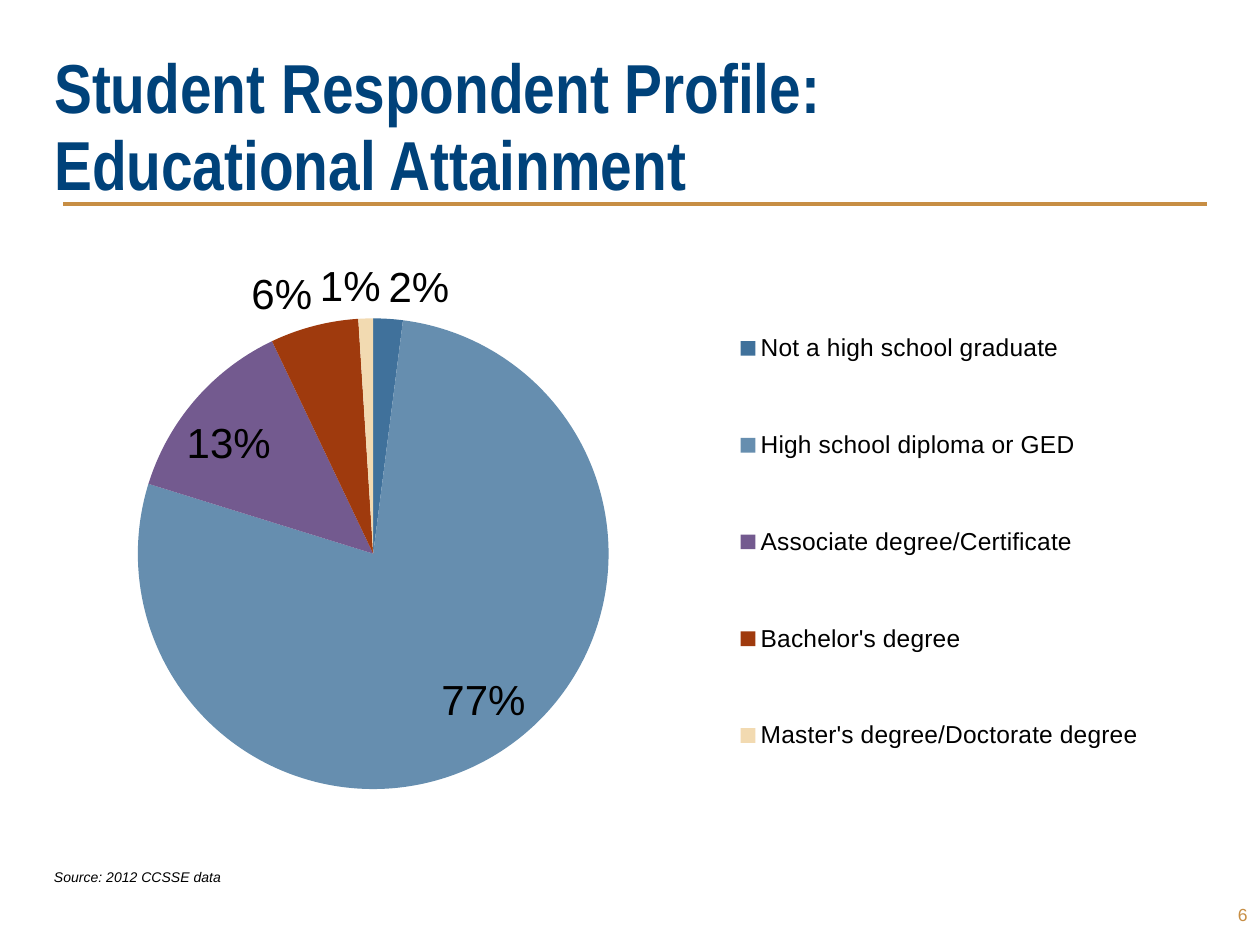
from lxml import etree
from pptx import Presentation
from pptx.chart.data import CategoryChartData
from pptx.dml.color import RGBColor
from pptx.enum.chart import XL_CHART_TYPE, XL_LABEL_POSITION, XL_LEGEND_POSITION
from pptx.enum.shapes import MSO_CONNECTOR
from pptx.enum.text import MSO_ANCHOR, MSO_AUTO_SIZE, PP_ALIGN
from pptx.oxml.ns import qn
from pptx.util import Inches, Pt

PIE = XL_CHART_TYPE.PIE
BEST_FIT = XL_LABEL_POSITION.BEST_FIT
LEGEND_RIGHT = XL_LEGEND_POSITION.RIGHT
STRAIGHT = MSO_CONNECTOR.STRAIGHT
TOP, MIDDLE, BOTTOM = MSO_ANCHOR.TOP, MSO_ANCHOR.MIDDLE, MSO_ANCHOR.BOTTOM
NO_AUTOFIT = MSO_AUTO_SIZE.NONE
LEFT, RIGHT = PP_ALIGN.LEFT, PP_ALIGN.RIGHT

NAVY = RGBColor(0x00, 0x42, 0x7A)
GOLD = RGBColor(0xC7, 0x8E, 0x44)
BLACK = RGBColor(0x00, 0x00, 0x00)
STEEL = RGBColor(0x40, 0x71, 0x9B)
LIGHT_STEEL = RGBColor(0x66, 0x8E, 0xAF)
PURPLE = RGBColor(0x73, 0x5A, 0x8F)
RUST = RGBColor(0x9F, 0x3A, 0x0D)
CREAM = RGBColor(0xF2, 0xDA, 0xB1)

# Category, share of respondents, slice colour; rows without a share have no slice
ATTAINMENT = [
    ("Not a high school graduate", 0.02, STEEL),
    ("High school diploma or GED", 0.77, LIGHT_STEEL),
    ("", None, NAVY),
    ("Associate degree/Certificate", 0.13, PURPLE),
    ("Bachelor's degree", 0.06, RUST),
    ("Master's degree/Doctorate degree", 0.01, CREAM),
    ("", None, RUST),
]


def format_font(font, size, color=BLACK, name="Arial", bold=False, italic=False):
    font.name, font.size = name, Pt(size)
    font.bold, font.italic = bold, italic
    font.color.rgb = color


def write_text(shape, text, size, anchor=TOP, align=LEFT, line_spacing=None, **font_format):
    frame = shape.text_frame
    frame.word_wrap = True
    frame.auto_size = NO_AUTOFIT
    frame.vertical_anchor = anchor
    frame.text = text
    for paragraph in frame.paragraphs:
        paragraph.alignment = align
        if line_spacing:
            paragraph.line_spacing = Pt(line_spacing)
        for run in paragraph.runs:
            format_font(run.font, size, **font_format)


def add_text(slide, box, text, size, **text_format):
    write_text(slide.shapes.add_textbox(*box), text, size, **text_format)


def place_title(slide, left, top, width, height):
    title = slide.shapes.title
    title.left, title.top, title.width, title.height = left, top, width, height
    write_text(title, "Student Respondent Profile:\vEducational Attainment", 39.6,
               anchor=BOTTOM, line_spacing=44, color=NAVY, name="Arial Narrow", bold=True)


def add_rule(slide, left, top, width):
    rule = slide.shapes.add_connector(STRAIGHT, left, top, left + width, top)
    rule.line.color.rgb = GOLD
    rule.line.width = Pt(2.25)
    etree.SubElement(rule._element.spPr, qn("a:effectLst"))


def set_layout(parent, position, box, inner=False):
    """Place a chart part by fractions of the chart's box."""
    layout = parent.find(qn("c:layout"))
    if layout is None:
        layout = etree.Element(qn("c:layout"))
        parent.insert(position, layout)
    for child in list(layout):
        layout.remove(child)
    manual = etree.SubElement(layout, qn("c:manualLayout"))
    settings = [("layoutTarget", "inner")] if inner else []
    settings += [("xMode", "edge"), ("yMode", "edge"), *zip("xywh", box)]
    for tag, value in settings:
        etree.SubElement(manual, qn(f"c:{tag}")).set("val", str(value))


def hide_legend_entry(legend_element, position, index):
    entry = etree.Element(qn("c:legendEntry"))
    etree.SubElement(entry, qn("c:idx")).set("val", str(index))
    etree.SubElement(entry, qn("c:delete")).set("val", "1")
    legend_element.insert(position, entry)


def add_attainment_chart(slide, left, top, width, height):
    data = CategoryChartData(number_format="0%")
    data.categories = [category for category, _, _ in ATTAINMENT]
    data.add_series("Series 1", [share for _, share, _ in ATTAINMENT])
    chart = slide.shapes.add_chart(PIE, left, top, width, height, data).chart
    chart.has_title = False
    format_font(chart.font, 18)

    # Slices
    plot = chart.plots[0]
    plot.vary_by_categories = True
    for index, (_, _, color) in enumerate(ATTAINMENT):
        fill = plot.series[0].points[index].format.fill
        fill.solid()
        fill.fore_color.rgb = color

    # Percentage labels
    plot.has_data_labels = True
    labels = plot.data_labels
    labels.show_value = True
    labels.show_percentage = False
    labels.number_format = "0%"
    labels.number_format_is_linked = False
    labels.position = BEST_FIT
    format_font(labels.font, 24)

    # Legend, without the rows that have no share
    chart.has_legend = True
    legend = chart.legend
    legend.position = LEGEND_RIGHT
    legend.include_in_layout = False
    format_font(legend.font, 14)
    hidden = [index for index, (_, share, _) in enumerate(ATTAINMENT) if share is None]
    for position, index in enumerate(hidden, start=1):
        hide_legend_entry(legend._element, position, index)

    # Positions inside the chart
    set_layout(chart._chartSpace.chart.plotArea, 0, (0.07, 0.13, 0.42, 0.8), inner=True)
    set_layout(legend._element, 1 + len(hidden), (0.57, 0.04, 0.41, 0.94))


def add_footer(slide, left, top, width, height):
    add_text(slide, (left, top, Inches(2), Inches(0.24)),
             "Source: 2012 CCSSE data", 8, italic=True)
    number_width, number_height = Inches(0.67), Inches(0.35)
    add_text(slide, (left + width - number_width, top + height - number_height,
                     number_width, number_height),
             "6", 10, anchor=MIDDLE, align=RIGHT, color=GOLD)


def main():
    presentation = Presentation()
    presentation.slide_width = Inches(10)
    presentation.slide_height = Inches(7.5)
    slide = presentation.slides.add_slide(presentation.slide_layouts[5])
    add_rule(slide, Inches(0.5), Inches(1.62), Inches(9.08))
    place_title(slide, Inches(0.33), Inches(0.54), Inches(9.33), Inches(1.13))
    add_attainment_chart(slide, Inches(0.42), Inches(1.92), Inches(9.08), Inches(4.67))
    add_footer(slide, Inches(0.33), Inches(6.84), Inches(9.67), Inches(0.59))
    presentation.save("out.pptx")


if __name__ == "__main__":
    main()
